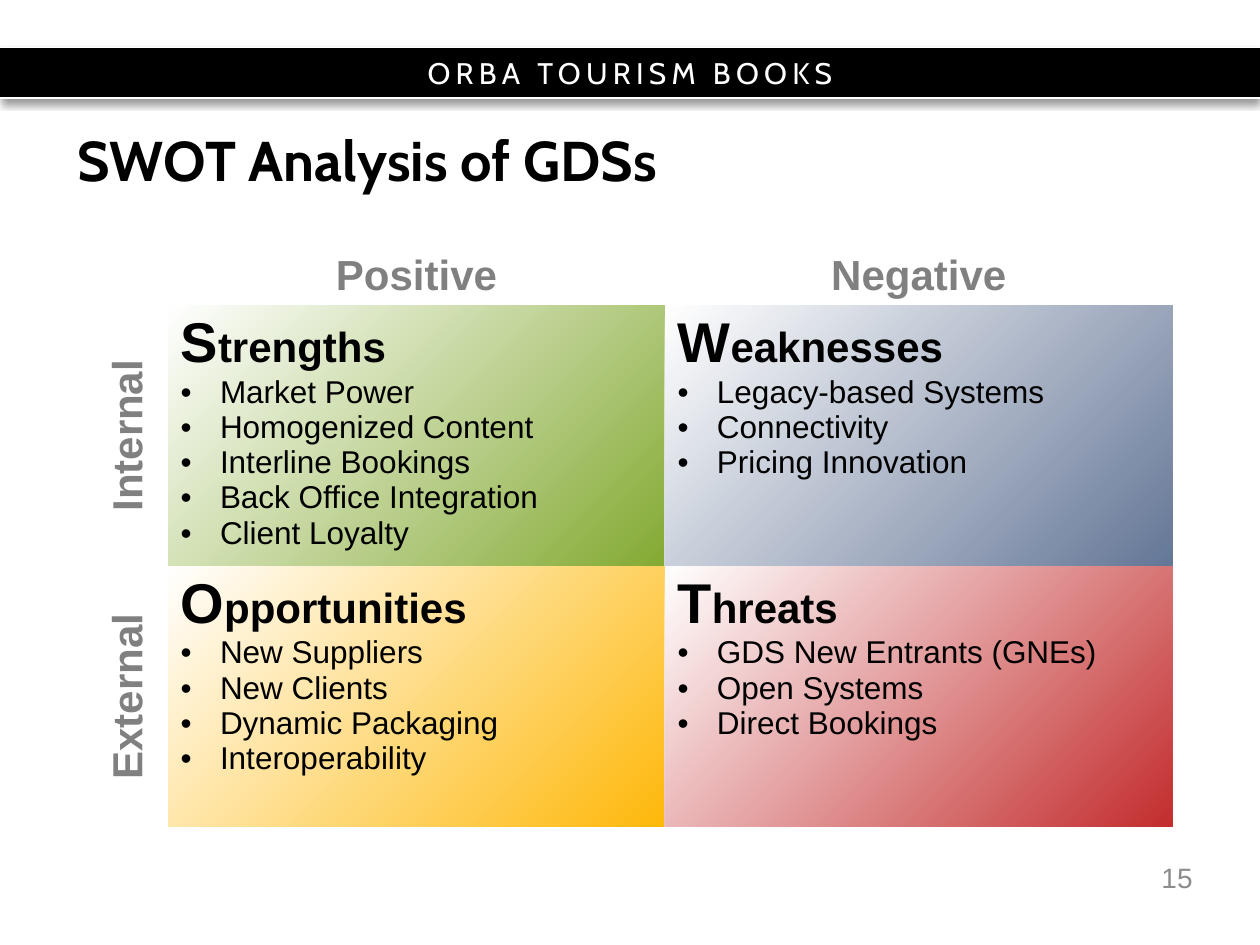
from dataclasses import dataclass

from lxml import etree
from pptx import Presentation
from pptx.dml.color import RGBColor
from pptx.enum.shapes import MSO_CONNECTOR, MSO_SHAPE
from pptx.enum.text import MSO_ANCHOR, MSO_AUTO_SIZE, PP_ALIGN
from pptx.oxml import parse_xml
from pptx.oxml.ns import nsdecls, qn
from pptx.util import Pt

LEFT, CENTER, RIGHT = PP_ALIGN.LEFT, PP_ALIGN.CENTER, PP_ALIGN.RIGHT
MIDDLE = MSO_ANCHOR.MIDDLE
NO_AUTO_SIZE = MSO_AUTO_SIZE.NONE
RECTANGLE = MSO_SHAPE.RECTANGLE
STRAIGHT = MSO_CONNECTOR.STRAIGHT
TITLE_ONLY = 5
PLAIN_TABLE_STYLE = "{2D5ABB26-0587-4C30-8999-92F81FD0307C}"


@dataclass(frozen=True)
class Theme:
    ink: str = "000000"
    paper: str = "FFFFFF"
    label: str = "808080"
    number: str = "8C8C8C"
    strengths: str = "84AA33"
    weaknesses: str = "657797"
    opportunities: str = "FEB80A"
    threats: str = "C32D2E"
    head_font: str = "Cabin"
    body_font: str = "Arial"
    title_size: int = 32
    heading_size: int = 24
    item_size: int = 18
    band_size: int = 17
    number_size: int = 16


THEME = Theme()

COLUMN_LABELS = ["Positive", "Negative"]
ROW_LABELS = ["Internal", "External"]
QUADRANTS = [
    [
        ("Strengths", THEME.strengths,
         ["Market Power", "Homogenized Content", "Interline Bookings",
          "Back Office Integration", "Client Loyalty"]),
        ("Weaknesses", THEME.weaknesses,
         ["Legacy-based Systems", "Connectivity", "Pricing Innovation"]),
    ],
    [
        ("Opportunities", THEME.opportunities,
         ["New Suppliers", "New Clients", "Dynamic Packaging",
          "Interoperability"]),
        ("Threats", THEME.threats,
         ["GDS New Entrants (GNEs)", "Open Systems", "Direct Bookings"]),
    ],
]


def write(para, text, *, size, color=THEME.ink, font=THEME.body_font,
          bold=False, align=LEFT, spacing=None):
    para.alignment = align
    span = para.add_run()
    span.text = text
    span.font.name = font
    span.font.size = Pt(size)
    span.font.bold = bold
    span.font.color.rgb = RGBColor.from_string(color)
    if spacing:
        span.font._element.set("spc", str(spacing * 100))


def add_band(page, text, left, top, width, height):
    band = page.shapes.add_shape(RECTANGLE, Pt(left), Pt(top),
                                 Pt(width), Pt(height))
    band.fill.solid()
    band.fill.fore_color.rgb = RGBColor.from_string(THEME.ink)
    band.line.fill.background()
    band.shadow.inherit = False
    effects = band._element.spPr.find(qn("a:effectLst"))
    effects.append(parse_xml(
        f'<a:outerShdw {nsdecls("a")} blurRad="{Pt(4)}" dist="{Pt(3)}" '
        f'dir="5400000" algn="t" rotWithShape="0"><a:srgbClr val="{THEME.ink}">'
        '<a:alpha val="40000"/></a:srgbClr></a:outerShdw>'))
    band.text_frame.vertical_anchor = MIDDLE
    write(band.text_frame.paragraphs[0], text, size=THEME.band_size,
          color=THEME.paper, font=THEME.head_font, align=CENTER, spacing=3)
    for edge in (top, top + height):
        rule = page.shapes.add_connector(STRAIGHT, Pt(left), Pt(edge),
                                         Pt(left + width), Pt(edge))
        rule.line.color.rgb = RGBColor.from_string(THEME.paper)
        rule.line.width = Pt(0.75)
        etree.SubElement(rule._element.spPr, qn("a:effectLst"))


def place_title(page, text, left, top, width, height):
    title = page.shapes.title
    title.left, title.top = Pt(left), Pt(top)
    title.width, title.height = Pt(width), Pt(height)
    frame = title.text_frame
    frame.auto_size = NO_AUTO_SIZE
    frame.vertical_anchor = MIDDLE
    para = frame.paragraphs[0]
    para.line_spacing = Pt(THEME.title_size)
    write(para, text, size=THEME.title_size, font=THEME.head_font, bold=True)


def fill_from_corner(cell, color):
    """Shade the cell from its lower right corner to white."""
    cell._tc.get_or_add_tcPr().append(parse_xml(
        f'<a:gradFill {nsdecls("a")} rotWithShape="1"><a:gsLst>'
        f'<a:gs pos="0"><a:srgbClr val="{color}"/></a:gs>'
        f'<a:gs pos="100000"><a:srgbClr val="{THEME.paper}"/></a:gs>'
        '</a:gsLst><a:path path="circle">'
        '<a:fillToRect l="100000" t="100000"/></a:path>'
        '<a:tileRect r="-100000" b="-100000"/></a:gradFill>'))


def add_bullet(para):
    props = para._p.get_or_add_pPr()
    props.set("marL", str(Pt(22.5)))
    props.set("indent", str(-Pt(22.5)))
    etree.SubElement(props, qn("a:buFont")).set("typeface", THEME.body_font)
    etree.SubElement(props, qn("a:buChar")).set("char", "•")


def fill_label(cell, text):
    cell.fill.background()
    write(cell.text_frame.paragraphs[0], text, size=THEME.heading_size,
          color=THEME.label, bold=True, align=CENTER)


def fill_quadrant(cell, heading, color, items):
    fill_from_corner(cell, color)
    para = cell.text_frame.paragraphs[0]
    write(para, heading[0], size=THEME.title_size, bold=True)
    write(para, heading[1:], size=THEME.heading_size, bold=True)
    for item in items:
        para = cell.text_frame.add_paragraph()
        add_bullet(para)
        write(para, item, size=THEME.item_size)


def add_swot_table(page, left, top, widths, heights):
    table = page.shapes.add_table(len(heights), len(widths), Pt(left), Pt(top),
                                  Pt(sum(widths)), Pt(sum(heights))).table
    table.first_row = table.horz_banding = False
    table._tbl.tblPr.find(qn("a:tableStyleId")).text = PLAIN_TABLE_STYLE
    for column, width in zip(table.columns, widths):
        column.width = Pt(width)
    for row, height in zip(table.rows, heights):
        row.height = Pt(height)

    table.cell(0, 0).fill.background()
    for col, label in enumerate(COLUMN_LABELS, 1):
        fill_label(table.cell(0, col), label)
    for row, (label, quadrants) in enumerate(zip(ROW_LABELS, QUADRANTS), 1):
        label_cell = table.cell(row, 0)
        fill_label(label_cell, label)
        label_cell._tc.get_or_add_tcPr().set("vert", "vert270")
        for col, quadrant in enumerate(quadrants, 1):
            fill_quadrant(table.cell(row, col), *quadrant)


def add_page_number(page, text, left, top, width, height):
    box = page.shapes.add_textbox(Pt(left), Pt(top), Pt(width), Pt(height))
    box.text_frame.word_wrap = True
    box.text_frame.vertical_anchor = MIDDLE
    write(box.text_frame.paragraphs[0], text, size=THEME.number_size,
          color=THEME.number, align=RIGHT)


def main():
    deck = Presentation()
    deck.slide_width, deck.slide_height = Pt(720), Pt(540)
    page = deck.slides.add_slide(deck.slide_layouts[TITLE_ONLY])
    add_band(page, "ORBA TOURISM BOOKS", 0, 27, 720, 29)
    add_swot_table(page, 56, 140.5, [40, 284, 290], [25, 149, 149])
    place_title(page, "SWOT Analysis of GDSs", 37, 77, 652, 34.5)
    add_page_number(page, "15", 520.5, 487, 168, 29)
    deck.save("out.pptx")


if __name__ == "__main__":
    main()
